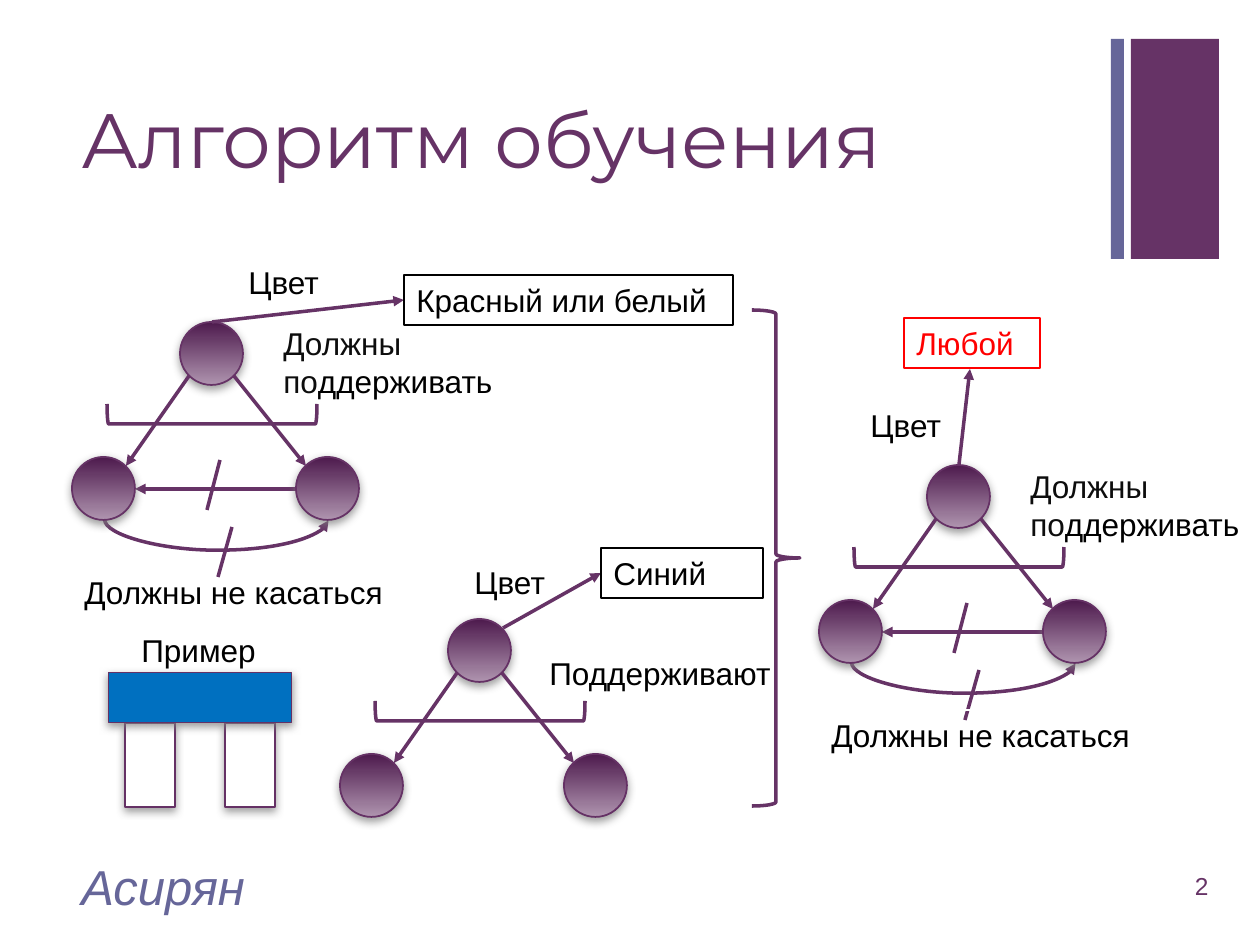
import pptx
import pptx.util
import pptx.dml.color
import pptx.enum.shapes
import pptx.enum.text
import pptx.oxml
import pptx.oxml.ns

PX = 914400 // 126
SHAPE = pptx.enum.shapes.MSO_SHAPE
LINK = pptx.enum.shapes.MSO_CONNECTOR
ALIGN = pptx.enum.text.PP_ALIGN
ANCHOR = pptx.enum.text.MSO_ANCHOR
A_NS = pptx.oxml.ns.nsdecls("a")
PLUM, EDGE, LILAC = "663366", "653165", "666699"
BLACK, INK, WHITE, RED = "000000", "0D0D0D", "FFFFFF", "FF0000"

# Content: header bars as (box, colour)
BARS = [((1131, 39, 88, 220), PLUM), ((1111, 39, 13, 220), LILAC)]

# Example arch: (box, rotation, fill)
ARCH = [((125, 723, 50, 84), 0, WHITE), ((225, 723, 50, 84), 0, WHITE),
        ((175, 606, 50, 183), 90, "0070C0")]

# Trees: (corner of top node, node edge, whether the legs must not touch, label outline)
TREES = [((448, 619), EDGE, False, None),
         ((927, 465), EDGE, True, WHITE),
         ((180, 322), PLUM, True, None)]

# Offsets from the corner of the top node
NODE = 63
NODES = [(0, 0), (116, 135), (-108, 135)]
SUPPORTS = [((9, 54), (-54, 144)), ((54, 54), (126, 144))]
BRACKET = (22, -13, 20, 210)
TOUCH_ARROW = ((116, 167), (-45, 167))
SLASHES = [((40, 138), (27, 188)), ((52, 205), (38, 255))]
CURVE = ((36, 86), (37, 310))
CURVE_DEPTH = 31
MUST_SUPPORT = [("Должны ", INK), None, ("по", INK), ("ддерживать", BLACK)]

# Colour arrows and values
COLOUR_ARROWS = [((503, 628), (601, 573)), ((959, 465), (970, 369)),
                 ((212, 322), (404, 300))]
LABELS = [("Поддерживают", (537, 648, 329, 50)), ("Цвет", (462, 557, 329, 50)),
          ("Пример", (129, 625, 142, 50)), ("Цвет", (858, 400, 329, 50)),
          ("Цвет", (236, 257, 329, 50))]
VALUES = [("Синий", (601, 548, 162, 50), BLACK), ("Любой", (904, 318, 136, 50), RED),
          ("Красный или белый", (404, 275, 329, 50), BLACK)]

prs = pptx.Presentation()
prs.slide_width, prs.slide_height = 1260 * PX, 945 * PX
s = prs.slides.add_slide(prs.slide_layouts[6])


def rgb(value):
    return pptx.dml.color.RGBColor.from_string(value)


def shifted(origin, point):
    return origin[0] + point[0], origin[1] + point[1]


def add_shape(kind, box, fill=None, line=None, width=1, shadow=False):
    sp = s.shapes.add_shape(kind, *(v * PX for v in box))
    sp.shadow.inherit = False
    if fill == "gradient":
        sp.fill.gradient()
        sp.fill.gradient_angle = 270
        for stop, colour in zip(sp.fill.gradient_stops, ("4D1A4D", "AF94AF")):
            stop.color.rgb = rgb(colour)
    elif fill:
        sp.fill.solid()
        sp.fill.fore_color.rgb = rgb(fill)
    else:
        sp.fill.background()
    if line:
        sp.line.color.rgb = rgb(line)
        sp.line.width = pptx.util.Pt(width)
    else:
        sp.line.fill.background()
    if shadow:
        effects = sp._element.spPr.find(pptx.oxml.ns.qn("a:effectLst"))
        effects.append(pptx.oxml.parse_xml(
            f'<a:outerShdw {A_NS} blurRad="63500" dist="25400" dir="5400000" rotWithShape="0">'
            '<a:srgbClr val="808080"><a:alpha val="75000"/></a:srgbClr></a:outerShdw>'))
    return sp


def add_text(runs, box, size=18, font="Arial", outline=None, italic=False,
             anchor=ANCHOR.TOP, align=ALIGN.LEFT, spacing=None):
    """Write (text, colour) runs; None stands for a line break."""
    if outline:
        sp = add_shape(SHAPE.RECTANGLE, box, line=outline, width=0.75)
    else:
        sp = s.shapes.add_textbox(*(v * PX for v in box))
    tf = sp.text_frame
    tf.word_wrap = True
    tf.vertical_anchor = anchor
    p = tf.paragraphs[0]
    p.alignment = align
    p.line_spacing = spacing
    for run in runs:
        if run is None:
            p.add_line_break()
            continue
        r = p.add_run()
        r.text = run[0]
        r.font.size = pptx.util.Pt(size)
        r.font.name = font
        r.font.italic = italic
        r.font.color.rgb = rgb(run[1])


def add_line(start, end, arrow=True, kind=LINK.STRAIGHT):
    cx = s.shapes.add_connector(kind, *(v * PX for v in (*start, *end)))
    cx.line.color.rgb = rgb(PLUM)
    cx.line.width = pptx.util.Pt(2)
    if arrow:
        cx.line._get_or_add_ln().append(
            pptx.oxml.parse_xml(f'<a:tailEnd {A_NS} type="triangle"/>'))
    cx._element.spPr.append(pptx.oxml.parse_xml(f'<a:effectLst {A_NS}/>'))
    return cx


def add_no_touch_links(origin):
    cx = add_line(*(shifted(origin, pt) for pt in CURVE), kind=LINK.CURVE)
    spPr = cx._element.spPr
    spPr.xfrm.set("rot", "16200000")
    spPr.xfrm.set("flipH", "1")
    guides = spPr.find(pptx.oxml.ns.qn("a:prstGeom")).get_or_add_avLst()
    guides.append(pptx.oxml.parse_xml(
        f'<a:gd {A_NS} name="adj1" fmla="val {CURVE_DEPTH * 100000}"/>'))
    add_line(*(shifted(origin, pt) for pt in TOUCH_ARROW))
    for slash in SLASHES:
        add_line(*(shifted(origin, pt) for pt in slash), arrow=False)


def add_tree(origin, edge, no_touch, outline):
    if no_touch:
        add_no_touch_links(origin)
    for node in NODES:
        add_shape(SHAPE.FLOWCHART_CONNECTOR, (*shifted(origin, node), NODE, NODE),
                  "gradient", edge, shadow=True)
    for support in SUPPORTS:
        add_line(*(shifted(origin, pt) for pt in support))
    bracket = add_shape(SHAPE.RIGHT_BRACKET,
                        (*shifted(origin, BRACKET[:2]), *BRACKET[2:]), line=PLUM, width=2)
    bracket.rotation = 90
    if no_touch:
        add_text(MUST_SUPPORT, (*shifted(origin, (91, -4)), 377, 89))
        add_text([("Должны не касаться", BLACK)],
                 (*shifted(origin, (-108, 245)), 445, 50), outline=outline)


# Header and footer
for box, colour in BARS:
    add_shape(SHAPE.RECTANGLE, box, colour)
add_text([("Алгоритм обучения", PLUM)], (69, 67, 1041, 154), 44, "Montserrat",
         anchor=ANCHOR.MIDDLE, spacing=0.9)
add_text([("Асирян", LILAC)], (69, 861, 844, 50), 28, italic=True, anchor=ANCHOR.MIDDLE)
add_text([("2", PLUM)], (1144, 861, 77, 50), 14, anchor=ANCHOR.MIDDLE, align=ALIGN.RIGHT)

# Brace and example arch
add_shape(SHAPE.RIGHT_BRACE, (752, 310, 48, 496), line=PLUM, width=2)
for box, angle, colour in ARCH:
    add_shape(SHAPE.FLOWCHART_PROCESS, box, colour, EDGE, shadow=True).rotation = angle

# Trees with their colour values
for tree in TREES:
    add_tree(*tree)
for start, end in COLOUR_ARROWS:
    add_line(start, end)
for text, box in LABELS:
    add_text([(text, BLACK)], box)
for text, box, colour in VALUES:
    add_text([(text, colour)], box, outline=colour)

prs.save("out.pptx")
